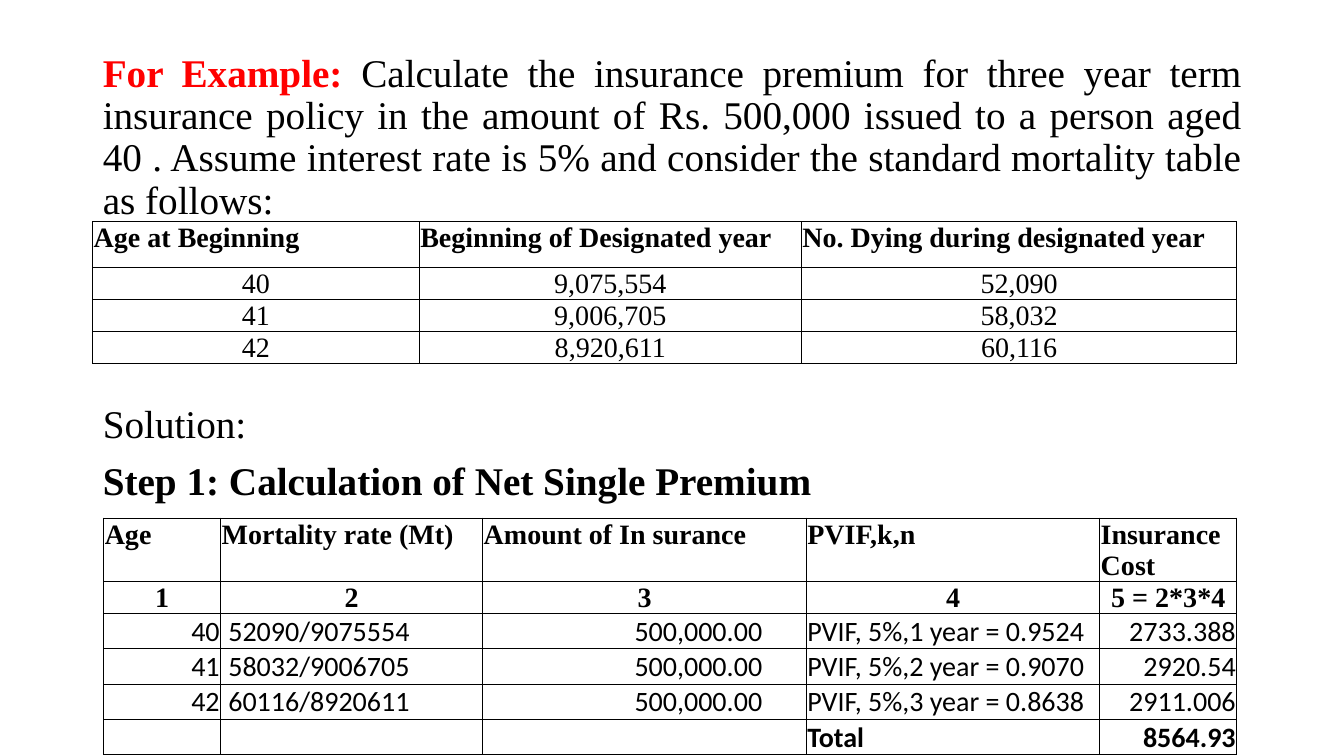
from dataclasses import dataclass

import pptx
import pptx.dml.color
import pptx.enum.text
import pptx.oxml
import pptx.oxml.ns
import pptx.slide
import pptx.table
import pptx.text.text
import pptx.util

ALIGN = pptx.enum.text.PP_ALIGN
ANCHOR = pptx.enum.text.MSO_ANCHOR
SLIDE_WIDTH = pptx.util.Inches(13.33)
SLIDE_HEIGHT = pptx.util.Inches(7.5)


@dataclass(frozen=True)
class Theme:
    ink: str = "000000"
    accent: str = "FF0000"
    serif: str = "Times New Roman"
    sans: str = "Calibri"
    body_size: float = 28
    table_size: float = 20
    border: float = 0.75
    inset: float = 0.01


THEME = Theme()


@dataclass(frozen=True)
class CellStyle:
    """Look of a cell; pads are extra side insets in percent of slide width."""
    align: ALIGN = ALIGN.LEFT
    anchor: ANCHOR = ANCHOR.BOTTOM
    font: str = THEME.serif
    bold: bool = False
    left_pad: float = 0
    right_pad: float = 0


@dataclass(frozen=True)
class Row:
    height: float
    texts: tuple[str, ...]
    styles: tuple[CellStyle, ...]


@dataclass(frozen=True)
class Grid:
    """A table placed and measured in percent of the slide's size."""
    left: float
    top: float
    columns: tuple[float, ...]
    rows: tuple[Row, ...]


def across(percent: float) -> int:
    return round(SLIDE_WIDTH * percent / 100)


def down(percent: float) -> int:
    return round(SLIDE_HEIGHT * percent / 100)


HEADING = CellStyle(anchor=ANCHOR.TOP, bold=True)
COUNT = CellStyle(ALIGN.CENTER, ANCHOR.MIDDLE)
COLUMN_NUMBER = CellStyle(ALIGN.CENTER, bold=True)
LABEL = CellStyle(font=THEME.sans)
FIGURE = CellStyle(ALIGN.RIGHT, font=THEME.sans)
RATE = CellStyle(font=THEME.sans, left_pad=0.5)
AMOUNT = CellStyle(ALIGN.RIGHT, font=THEME.sans, right_pad=3.2)
TOTAL_LABEL = CellStyle(font=THEME.sans, bold=True)
TOTAL_FIGURE = CellStyle(ALIGN.RIGHT, font=THEME.sans, bold=True)

MORTALITY = Grid(6.9, 29.33, (24.3, 28.43, 32.4), (
    Row(6, ("Age at Beginning", "Beginning of Designated year",
            "No. Dying during designated year"), (HEADING,) * 3),
    *(Row(4.24, texts, (COUNT,) * 3) for texts in (
        ("40", "9,075,554", "52,090"),
        ("41", "9,006,705", "58,032"),
        ("42", "8,920,611", "60,116"))),
))

PREMIUM = Grid(7.72, 68.53, (8.7, 19.5, 24.08, 21.83, 10.2), (
    Row(8.33, ("Age", "Mortality rate (Mt)", "Amount of In surance", "PVIF,k,n",
               "Insurance Cost"), (HEADING,) * 5),
    Row(4.24, ("1", "2", "3", "4", "5 = 2*3*4"), (COLUMN_NUMBER,) * 5),
    *(Row(4.67, (age, rate, "500,000.00", factor, cost),
          (FIGURE, RATE, AMOUNT, LABEL, FIGURE))
      for age, rate, factor, cost in (
          ("40", "52090/9075554", "PVIF, 5%,1 year = 0.9524", "2733.388"),
          ("41", "58032/9006705", "PVIF, 5%,2 year = 0.9070", "2920.54"),
          ("42", "60116/8920611", "PVIF, 5%,3 year = 0.8638", "2911.006"))),
    Row(4.67, ("", "", "", "Total", "8564.93"),
        (LABEL, LABEL, LABEL, TOTAL_LABEL, TOTAL_FIGURE)),
))


def set_font(font: pptx.text.text.Font, name: str, size: float, bold: bool) -> None:
    font.name = name
    font.size = pptx.util.Pt(size)
    font.bold = bold
    font.color.rgb = pptx.dml.color.RGBColor.from_string(THEME.ink)


def add_borders(cell: pptx.table._Cell) -> None:
    properties = cell._tc.get_or_add_tcPr()
    for side in ("lnL", "lnR", "lnT", "lnB"):
        properties.append(pptx.oxml.parse_xml(
            f'<a:{side} {pptx.oxml.ns.nsdecls("a")} w="{pptx.util.Pt(THEME.border)}">'
            f'<a:solidFill><a:srgbClr val="{THEME.ink}"/></a:solidFill></a:{side}>'))


def fill_cell(cell: pptx.table._Cell, text: str, style: CellStyle) -> None:
    inset = pptx.util.Inches(THEME.inset)
    cell.margin_left = inset + across(style.left_pad)
    cell.margin_right = inset + across(style.right_pad)
    cell.margin_top = inset
    cell.margin_bottom = 0
    cell.vertical_anchor = style.anchor
    add_borders(cell)
    cell.fill.background()
    cell.text = text
    paragraph = cell.text_frame.paragraphs[0]
    paragraph.alignment = style.align
    set_font(paragraph.font, style.font, THEME.table_size, style.bold)


def draw_grid(slide: pptx.slide.Slide, grid: Grid) -> None:
    table = slide.shapes.add_table(
        len(grid.rows), len(grid.columns), across(grid.left), down(grid.top),
        across(sum(grid.columns)), down(sum(row.height for row in grid.rows))).table
    table.first_row = False
    table.horz_banding = False
    for column, width in zip(table.columns, grid.columns):
        column.width = across(width)
    for table_row, row in zip(table.rows, grid.rows):
        table_row.height = down(row.height)
        for cell, text, style in zip(table_row.cells, row.texts, row.styles):
            fill_cell(cell, text, style)


def write_problem(slide: pptx.slide.Slide) -> None:
    body = slide.placeholders[1]
    body.left, body.top = across(6.9), down(6.4)
    body.width, body.height = across(86.25), down(83.6)
    frame = body.text_frame
    frame.word_wrap = True
    frame.auto_size = pptx.enum.text.MSO_AUTO_SIZE.NONE
    question = ("Calculate the insurance premium for three year term insurance policy "
                "in the amount of Rs. 500,000 issued to a person aged 40 . Assume "
                "interest rate is 5% and consider the standard mortality table as follows:")
    # The space before "Solution:" leaves room for the mortality table.
    paragraphs = (
        (("For Example: ", question), ALIGN.JUSTIFY, 0, False),
        (("Solution:",), ALIGN.LEFT, 130, False),
        (("Step 1: Calculation of Net Single Premium",), ALIGN.LEFT, 10, True),
    )
    for index, (texts, align, gap, bold) in enumerate(paragraphs):
        paragraph = frame.paragraphs[0] if index == 0 else frame.add_paragraph()
        properties = paragraph._p.get_or_add_pPr()
        properties.set("marL", "0")
        properties.set("indent", "0")
        properties.append(pptx.oxml.parse_xml(
            f'<a:buNone {pptx.oxml.ns.nsdecls("a")}/>'))
        paragraph.alignment = align
        paragraph.line_spacing = 0.9
        paragraph.space_before = pptx.util.Pt(gap)
        set_font(paragraph.font, THEME.serif, THEME.body_size, bold)
        for text in texts:
            paragraph.add_run().text = text
    lead = frame.paragraphs[0].runs[0].font
    lead.bold = True
    lead.color.rgb = pptx.dml.color.RGBColor.from_string(THEME.accent)


def main() -> None:
    presentation = pptx.Presentation()
    presentation.slide_width = SLIDE_WIDTH
    presentation.slide_height = SLIDE_HEIGHT
    slide = presentation.slides.add_slide(presentation.slide_layouts[1])
    title = slide.shapes.title.element
    title.getparent().remove(title)
    write_problem(slide)
    for grid in (MORTALITY, PREMIUM):
        draw_grid(slide, grid)
    presentation.save("out.pptx")


if __name__ == "__main__":
    main()
